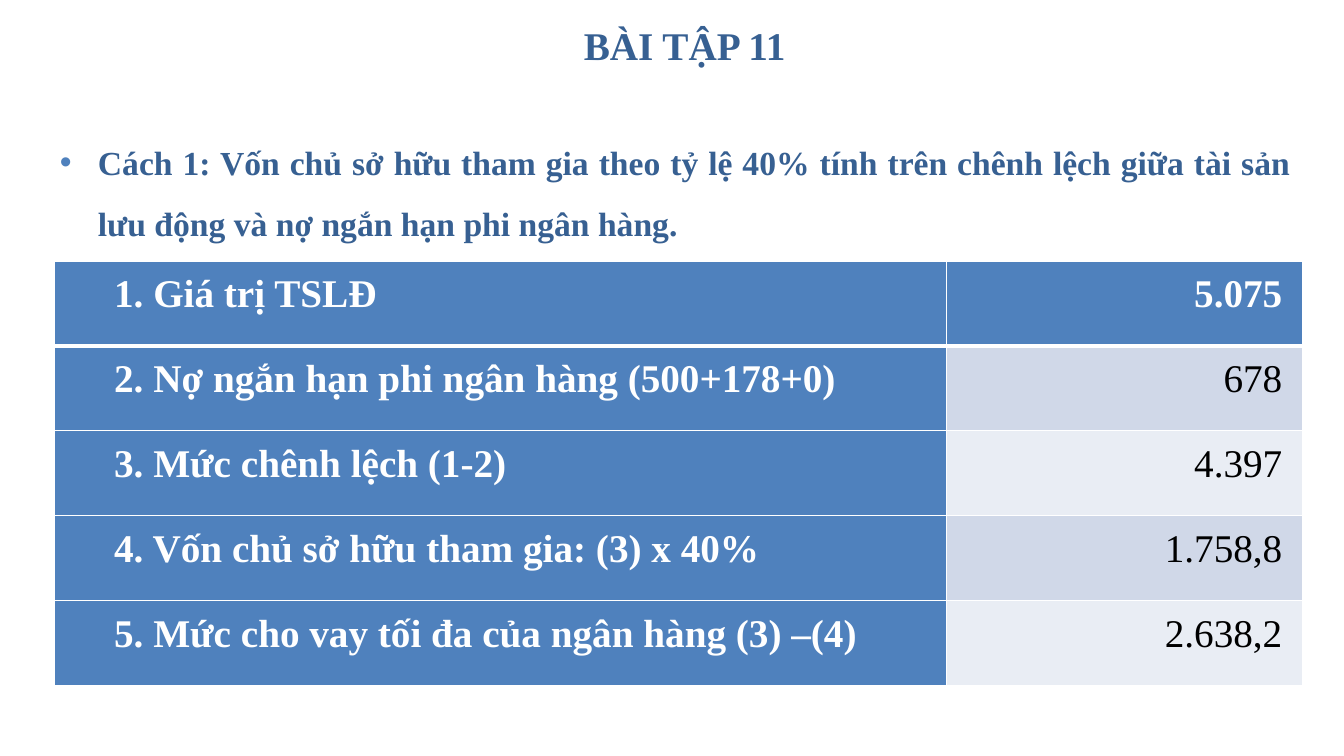
from lxml import etree
from pptx import Presentation
from pptx import util as u
from pptx.dml.color import RGBColor
from pptx.enum import text
from pptx.oxml import ns

THEME = {
    "font": "Times New Roman", "heading": 28, "body": 24,
    "navy": "376092", "blue": "4F81BD", "white": "FFFFFF", "black": "000000",
    "bands": ["D0D8E8", "E9EDF4"],
}
PX = 9071
ALIGN = text.PP_ALIGN


def write(frame, content, size, color, bold=True, align=ALIGN.LEFT, line=1.0, after=0,
          indent=0, hanging=0, bullet=None):
    para = frame.paragraphs[0]
    props = para._p.get_or_add_pPr()
    props.set("marL", str(indent * PX))
    props.set("indent", str(-hanging * PX))
    para.alignment, para.line_spacing = align, line
    para.space_before, para.space_after = u.Pt(0), u.Pt(after)
    if bullet:
        tint = etree.SubElement(props, ns.qn("a:buClr"))
        etree.SubElement(tint, ns.qn("a:srgbClr"), val=bullet)
        etree.SubElement(props, ns.qn("a:buFont"), typeface="Arial")
        etree.SubElement(props, ns.qn("a:buChar"), char="•")
    span = para.add_run()
    span.text = content
    span.font.name, span.font.size, span.font.bold = THEME["font"], u.Pt(size), bold
    span.font.color.rgb = RGBColor.from_string(color)


def border(cell, bottom):
    props = cell._tc.get_or_add_tcPr()
    for place, (side, width) in enumerate([("L", 1), ("R", 1), ("T", 1), ("B", bottom)]):
        edge = etree.Element(ns.qn(f"a:ln{side}"), w=str(u.Pt(width)))
        fill = etree.SubElement(edge, ns.qn("a:solidFill"))
        etree.SubElement(fill, ns.qn("a:srgbClr"), val=THEME["white"])
        props.insert(place, edge)


deck = Presentation()
deck.slide_width, deck.slide_height = u.Inches(13.33), u.Inches(7.5)
page = deck.slides.add_slide(deck.slide_layouts[6])

title = page.shapes.add_textbox(53 * PX, 3 * PX, 1263 * PX, 84 * PX).text_frame
title.word_wrap = True
title.vertical_anchor = text.MSO_ANCHOR.MIDDLE
write(title, "BÀI TẬP 11", THEME["heading"], THEME["navy"], align=ALIGN.CENTER)

method = page.shapes.add_textbox(50 * PX, 117 * PX, 1250 * PX, 584 * PX).text_frame
method.word_wrap = True
write(method, "Cách 1: Vốn chủ sở hữu tham gia theo tỷ lệ 40% tính trên chênh lệch giữa "
      "tài sản lưu động và nợ ngắn hạn phi ngân hàng.", THEME["body"], THEME["navy"],
      align=ALIGN.JUSTIFY, line=1.5, indent=38, hanging=38, bullet=THEME["blue"])

loan_rows = [
    ("1. Giá trị TSLĐ", "5.075"),
    ("2. Nợ ngắn hạn phi ngân hàng (500+178+0)", "678"),
    ("3. Mức chênh lệch (1-2)", "4.397"),
    ("4. Vốn chủ sở hữu tham gia: (3) x 40%", "1.758,8"),
    ("5. Mức cho vay tối đa của ngân hàng (3) –(4)", "2.638,2"),
]
table = page.shapes.add_table(len(loan_rows), 2, 54 * PX, 261 * PX, 1248 * PX, 425 * PX).table
for column, width in zip(table.columns, [892, 356]):
    column.width = width * PX

for row, entry in enumerate(loan_rows):
    table.rows[row].height = 85 * PX
    for column, content in enumerate(entry):
        cell = table.cell(row, column)
        is_value = column == 1
        is_header = row == 0 or not is_value
        cell.fill.solid()
        cell.fill.fore_color.rgb = RGBColor.from_string(
            THEME["blue"] if is_header else THEME["bands"][(row - 1) % 2])
        border(cell, bottom=3 if row == 0 else 1)
        cell.margin_right = (20 if is_value else 10) * PX
        write(cell.text_frame, content, THEME["heading"],
              THEME["white"] if is_header else THEME["black"], bold=is_header,
              align=ALIGN.RIGHT if is_value else ALIGN.JUSTIFY,
              line=1.15, after=10, indent=50)

deck.save("out.pptx")
